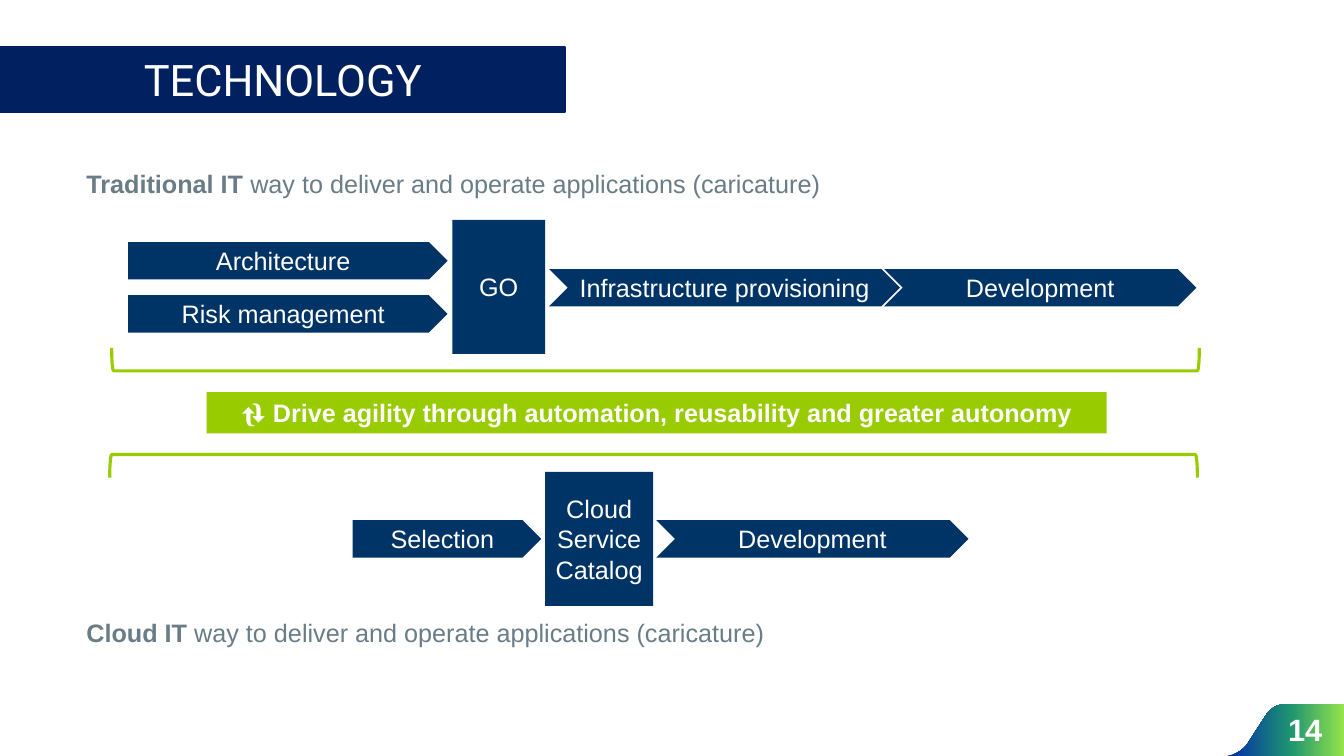
from copy import deepcopy
from dataclasses import dataclass

from pptx import Presentation
from pptx import util as u
from pptx.dml.color import RGBColor
from pptx.enum import shapes, text

NAVY, LIME, GREY, WHITE = "003366", "99CC00", "6A7C86", "FFFFFF"
KIND = shapes.MSO_SHAPE
ALIGN = text.PP_ALIGN
Point = tuple[float, float]


@dataclass
class Block:
    label: str
    kind: int
    left: float
    top: float
    width: float
    height: float = 0.94
    fill: str = NAVY
    bold: bool = False


@dataclass
class Bracket:
    left: float
    top: float
    turn: int


@dataclass
class Caption:
    lead: str
    top: float


BLOCKS = [
    Block("Architecture", KIND.PENTAGON, 3.23, 6.1, 8.05),
    Block("Risk management", KIND.PENTAGON, 3.23, 7.44, 8.05),
    Block("GO", KIND.RECTANGLE, 11.4, 5.54, 2.34, 3.38),
    Block("Infrastructure provisioning", KIND.CHEVRON, 13.84, 6.78, 8.84),
    Block("Development", KIND.CHEVRON, 22.28, 6.78, 7.87),
    Block("Development", KIND.CHEVRON, 16.54, 13.11, 7.87),
    Block("Selection", KIND.PENTAGON, 8.89, 13.11, 4.75),
    Block("Cloud Service Catalog", KIND.RECTANGLE, 13.74, 11.89, 2.72, 3.38),
    Block("🔃 Drive agility through automation, reusability and greater autonomy",
          KIND.RECTANGLE, 5.21, 9.88, 22.68, 1.04, LIME, True),
]
BRACKETS = [Bracket(16.23, -4.65, 270), Bracket(16.18, -1.96, 90)]
CAPTIONS = [Caption("Traditional IT ", 4.11), Caption("Cloud IT ", 15.42)]


def paint(target, shade: str) -> None:
    target.solid()
    target.fore_color.rgb = RGBColor.from_string(shade)


def add_run(para, words: str, size: float, shade: str,
            bold: bool = False, face: str = "Arial") -> None:
    run = para.add_run()
    run.text = words
    run.font.name = face
    run.font.size = u.Pt(size)
    run.font.bold = bold
    paint(run.font.fill, shade)


def set_frame(frame, inset: float = 0, wrap: bool = True):
    frame.word_wrap = wrap
    frame.auto_size = text.MSO_AUTO_SIZE.NONE
    frame.vertical_anchor = text.MSO_ANCHOR.MIDDLE
    frame.margin_left = frame.margin_right = u.Cm(inset)
    frame.margin_top = frame.margin_bottom = 0
    para = frame.paragraphs[0]
    para.alignment = ALIGN.CENTER
    return para


def curve(start: Point, pull: Point, push: Point, end: Point) -> list[Point]:
    steps = 12
    points = []
    for step in range(1, steps + 1):
        t = step / steps
        parts = ((1 - t) ** 3, 3 * t * (1 - t) ** 2, 3 * t * t * (1 - t), t ** 3)
        points.append(tuple(
            sum(part * spot[axis] for part, spot in zip(parts, (start, pull, push, end)))
            for axis in (0, 1)))
    return points


def draw_corner(slide) -> None:
    peak, foot, knee, bend = (32.51, 17.73), (31.06, 19.02), (31.47, 18.69), (31.93, 17.98)
    outline = [(33.87, 17.73), (33.87, 19.05), (30.91, 19.05), foot]
    outline += curve(foot, (31.19, 18.97), (31.37, 18.87), knee)
    outline += [bend] + curve(bend, bend, (32.08, 17.73), peak)
    pen = slide.shapes.build_freeform(u.Cm(peak[0]), u.Cm(peak[1]))
    pen.add_line_segments([(u.Cm(x), u.Cm(y)) for x, y in outline])
    corner = pen.convert_to_shape()
    corner.shadow.inherit = False
    corner.line.fill.background()
    corner.fill.gradient()
    corner.fill.gradient_angle = 0
    stops = corner.fill.gradient_stops
    first = stops[0]._gs
    first.addnext(deepcopy(first))
    shades = [(0, "002AAB"), (0.55, "1F9570"), (1, "95E34A")]
    for stop, (place, shade) in zip(corner.fill.gradient_stops, shades):
        stop.position = place
        stop.color.rgb = RGBColor.from_string(shade)
    box = slide.shapes.add_textbox(u.Cm(31.93), u.Cm(17.98), u.Cm(1.93), u.Cm(0.81))
    add_run(set_frame(box.text_frame, wrap=False), "14", 22, WHITE, True)


def draw_title(slide) -> None:
    title = slide.shapes.title
    title.left, title.top = u.Cm(0), u.Cm(1.19)
    title.width, title.height = u.Cm(14.25), u.Cm(1.63)
    paint(title.fill, "002060")
    paint(title.line.fill, "002060")
    title.line.width = u.Pt(1.5)
    add_run(set_frame(title.text_frame, 0.25), "TECHNOLOGY", 31, WHITE, face="Roboto")


def draw_block(slide, block: Block) -> None:
    shape = slide.shapes.add_shape(
        block.kind, u.Cm(block.left), u.Cm(block.top), u.Cm(block.width), u.Cm(block.height))
    shape.shadow.inherit = False
    shape.line.fill.background()
    paint(shape.fill, block.fill)
    add_run(set_frame(shape.text_frame), block.label, 18, WHITE, block.bold)


def draw_bracket(slide, item: Bracket) -> None:
    shape = slide.shapes.add_shape(
        KIND.LEFT_BRACKET, u.Cm(item.left), u.Cm(item.top), u.Cm(0.58), u.Cm(27.41))
    shape.rotation = item.turn
    shape.shadow.inherit = False
    shape.fill.background()
    paint(shape.line.fill, LIME)
    shape.line.width = u.Pt(2.25)


def draw_caption(slide, item: Caption) -> None:
    box = slide.shapes.add_textbox(u.Cm(1.93), u.Cm(item.top), u.Cm(29.44), u.Cm(1.02))
    para = set_frame(box.text_frame, 0.25)
    para.alignment = ALIGN.LEFT
    add_run(para, item.lead, 18, GREY, True)
    add_run(para, "way to deliver and operate applications (caricature)", 18, GREY)


def main() -> None:
    deck = Presentation()
    deck.slide_width, deck.slide_height = u.Cm(33.87), u.Cm(19.05)
    slide = deck.slides.add_slide(deck.slide_layouts[5])
    draw_corner(slide)
    draw_title(slide)
    for item in CAPTIONS:
        draw_caption(slide, item)
    for item in BRACKETS:
        draw_bracket(slide, item)
    for block in BLOCKS:
        draw_block(slide, block)
    deck.save("out.pptx")


if __name__ == "__main__":
    main()
